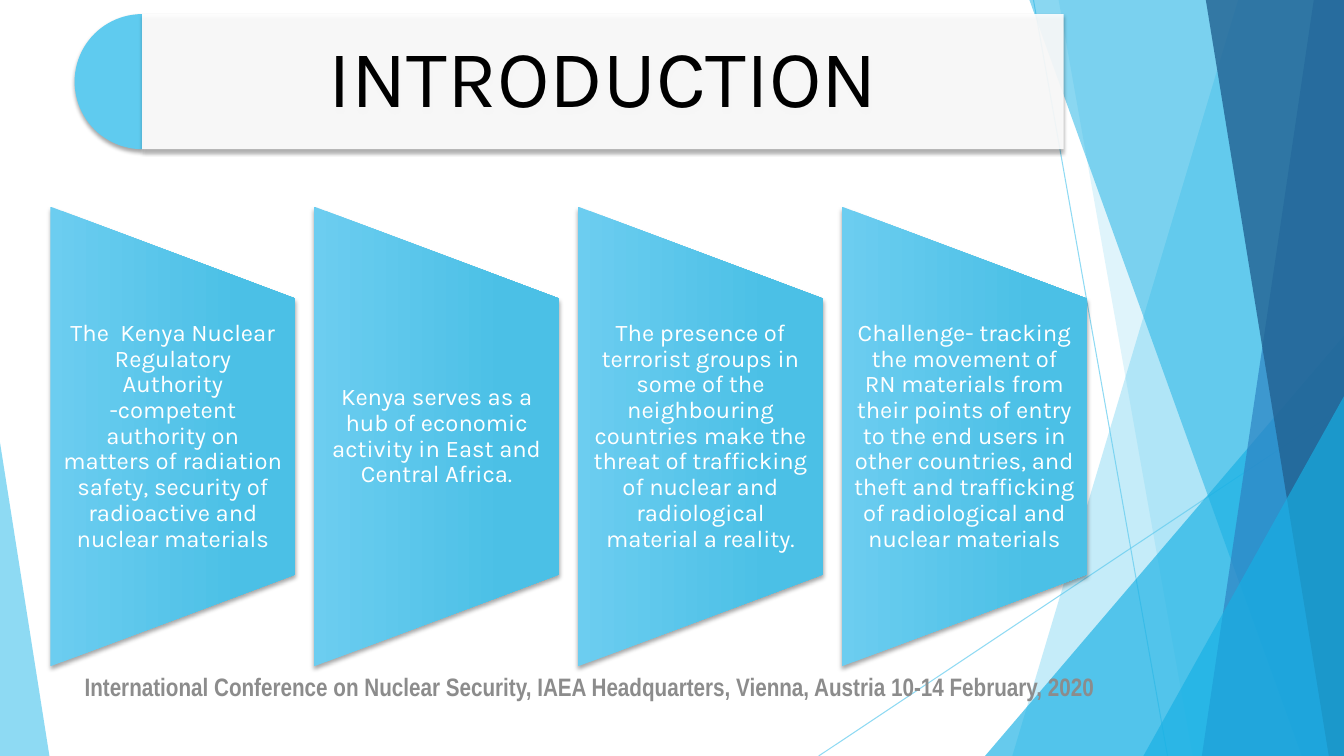
import pptx
import pptx.dml.color
import pptx.enum.dml
import pptx.enum.shapes
import pptx.enum.text
import pptx.oxml
import pptx.oxml.ns
import pptx.util

Inches = pptx.util.Inches
MSO_SHAPE = pptx.enum.shapes.MSO_SHAPE
ALIGN = pptx.enum.text.PP_ALIGN

COLORS = {
    "sky": "5FCBEF", "cyan": "17B0E4", "blue": "2E83C3", "navy": "226292",
    "panel_top": "6CCDF0", "panel_bottom": "4BC0E6",
    "white": "FFFFFF", "black": "000000", "grey": "8C8C8C",
}
DRAWING = 'xmlns:a="http://schemas.openxmlformats.org/drawingml/2006/main"'
SLIDE_WIDTH, SLIDE_HEIGHT = 13.33, 7.5

PANEL_TEXTS = [
    "The  Kenya Nuclear Regulatory Authority -competent authority on matters of "
    "radiation safety, security of radioactive and nuclear materials",
    "Kenya serves as a hub of economic activity in East and Central Africa.",
    "The presence of terrorist groups in some of the neighbouring countries make the "
    "threat of trafficking of nuclear and radiological material a reality.",
    "Challenge- tracking the movement of RN materials from their points of entry to the "
    "end users in other countries, and theft and trafficking of radiological and nuclear "
    "materials",
]


def rgb(name):
    return pptx.dml.color.RGBColor.from_string(COLORS[name])


def set_opacity(color_format_parent, percent):
    for color in color_format_parent.iter(pptx.oxml.ns.qn("a:srgbClr")):
        color.append(pptx.oxml.parse_xml(f'<a:alpha {DRAWING} val="{percent * 1000}"/>'))


def paint(shape, color, opacity=100):
    """Give a shape a flat fill and no outline or shadow."""
    shape.shadow.inherit = False
    shape.fill.solid()
    shape.fill.fore_color.rgb = rgb(color)
    shape.line.fill.background()
    if opacity < 100:
        set_opacity(shape._element.spPr, opacity)


def add_drop_shadow(shape):
    shape.shadow.inherit = False
    effects = shape._element.spPr.find(pptx.oxml.ns.qn("a:effectLst"))
    effects.append(pptx.oxml.parse_xml(
        f'<a:outerShdw {DRAWING} blurRad="38100" dist="25400" dir="5400000" '
        f'rotWithShape="0"><a:srgbClr val="{COLORS["black"]}"><a:alpha val="35000"/>'
        '</a:srgbClr></a:outerShdw>'))


def place(shape, left, top, width, height):
    shape.left, shape.top = Inches(left), Inches(top)
    shape.width, shape.height = Inches(width), Inches(height)


def write_text(shape, text, size, color, font="Karla", bold=False, align=ALIGN.CENTER,
               spacing=0.9, margins=(0.12, 0)):
    frame = shape.text_frame
    frame.word_wrap = True
    frame.auto_size = pptx.enum.text.MSO_AUTO_SIZE.NONE
    frame.vertical_anchor = pptx.enum.text.MSO_ANCHOR.MIDDLE
    frame.margin_left = frame.margin_right = Inches(margins[0])
    frame.margin_top = frame.margin_bottom = Inches(margins[1])
    paragraph = frame.paragraphs[0]
    paragraph.alignment = align
    paragraph.line_spacing = spacing
    run = paragraph.add_run()
    run.text = text
    run.font.name, run.font.size, run.font.bold = font, pptx.util.Pt(size), bold
    run.font.color.rgb = rgb(color)


def add_ray(slide, start, end):
    ray = slide.shapes.add_connector(
        pptx.enum.shapes.MSO_CONNECTOR.STRAIGHT, *map(Inches, start + end))
    ray.line.color.rgb = rgb("sky")
    ray.line.width = pptx.util.Pt(0.75)
    set_opacity(ray._element.spPr, 70)
    ray._element.spPr.append(pptx.oxml.parse_xml(f"<a:effectLst {DRAWING}/>"))


def add_shard(slide, top_left, bottom_left, color, opacity):
    """Fill from a slanted left edge to the right edge of the slide."""
    builder = slide.shapes.build_freeform(Inches(top_left), 0)
    corners = [(SLIDE_WIDTH, 0), (SLIDE_WIDTH, SLIDE_HEIGHT), (bottom_left, SLIDE_HEIGHT)]
    builder.add_line_segments([(Inches(x), Inches(y)) for x, y in corners])
    paint(builder.convert_to_shape(), color, opacity)


def add_corner_triangle(slide, left, top, width, apex, color, opacity):
    triangle = slide.shapes.add_shape(
        MSO_SHAPE.ISOSCELES_TRIANGLE, Inches(left), Inches(top), Inches(width),
        Inches(SLIDE_HEIGHT - top))
    triangle.adjustments[0] = apex
    paint(triangle, color, opacity)


def add_backdrop(slide):
    add_ray(slide, (10.25, 0), (11.58, SLIDE_HEIGHT))
    add_ray(slide, (SLIDE_WIDTH, 4.03), (8.12, SLIDE_HEIGHT))
    add_shard(slide, 12.28, 10.04, "sky", 36)
    add_shard(slide, 10.5, 11.83, "sky", 20)
    add_corner_triangle(slide, 9.77, 3.33, 3.56, 1, "cyan", 66)
    add_shard(slide, 10.21, 12.91, "cyan", 50)
    add_shard(slide, 13.03, 11.92, "blue", 70)
    add_shard(slide, 11.96, 13.18, "navy", 80)
    add_corner_triangle(slide, 11.34, 3.93, 1.99, 1, "cyan", 66)
    add_corner_triangle(slide, 0, 4.39, 0.49, 0, "sky", 70)


def add_title_banner(slide, left, top, width, height):
    cap = slide.shapes.add_shape(
        MSO_SHAPE.PIE, Inches(left), Inches(top), Inches(height), Inches(height))
    cap.adjustments[0], cap.adjustments[1] = 54, 162
    paint(cap, "sky")
    add_drop_shadow(cap)

    title = slide.shapes.title
    slide.shapes._spTree.append(title._element)  # in front of the backdrop
    place(title, left + height / 2, top, width - height / 2, height)
    title.fill.solid()
    title.fill.fore_color.rgb = rgb("white")
    set_opacity(title._element.spPr, 90)
    add_drop_shadow(title)
    write_text(title, "INTRODUCTION", 58, "black", margins=(0.24, 0.24))


def add_panel(slide, text, left, top, width, height):
    # The preset is laid on its side, then turned about its centre.
    panel = slide.shapes.add_shape(
        MSO_SHAPE.FLOWCHART_MANUAL_OPERATION,
        Inches(left + (width - height) / 2), Inches(top + (height - width) / 2),
        Inches(height), Inches(width))
    panel.rotation = 270
    panel.line.fill.background()
    panel.fill.gradient()
    panel.fill.gradient_angle = 270
    stops = panel.fill.gradient_stops
    for stop, position, color in zip(stops, (0, 0.78), ("panel_top", "panel_bottom")):
        stop.position = position
        stop.color.rgb = rgb(color)
    add_drop_shadow(panel)

    text_height = height * 0.6
    label = slide.shapes.add_textbox(
        Inches(left), Inches(top + (height - text_height) / 2), Inches(width),
        Inches(text_height))
    write_text(label, text, 17, "white")


def add_panel_row(slide, left, top, width, height, panel_width=2.43):
    pitch = (width - panel_width) / (len(PANEL_TEXTS) - 1)
    for index, text in enumerate(PANEL_TEXTS):
        add_panel(slide, text, left + index * pitch, top, panel_width, height)


def add_conference_line(slide, left, top, width, height):
    line = slide.shapes.add_textbox(*map(Inches, (left, top, width, height)))
    write_text(
        line,
        "International Conference on Nuclear Security, IAEA Headquarters, Vienna, Austria "
        "10-14 February, 2020",
        18, "grey", font="Arial Narrow", bold=True, align=ALIGN.LEFT, spacing=1.0,
        margins=(0.1, 0.05))


def main():
    presentation = pptx.Presentation()
    presentation.slide_width = Inches(SLIDE_WIDTH)
    presentation.slide_height = Inches(SLIDE_HEIGHT)
    slide = presentation.slides.add_slide(presentation.slide_layouts[5])
    add_backdrop(slide)
    add_title_banner(slide, 0.74, 0.14, 9.81, 1.34)
    add_conference_line(slide, 0.74, 6.61, 10.59, 0.4)
    add_panel_row(slide, 0.5, 2.05, 10.28, 4.56)
    presentation.save("out.pptx")


if __name__ == "__main__":
    main()
